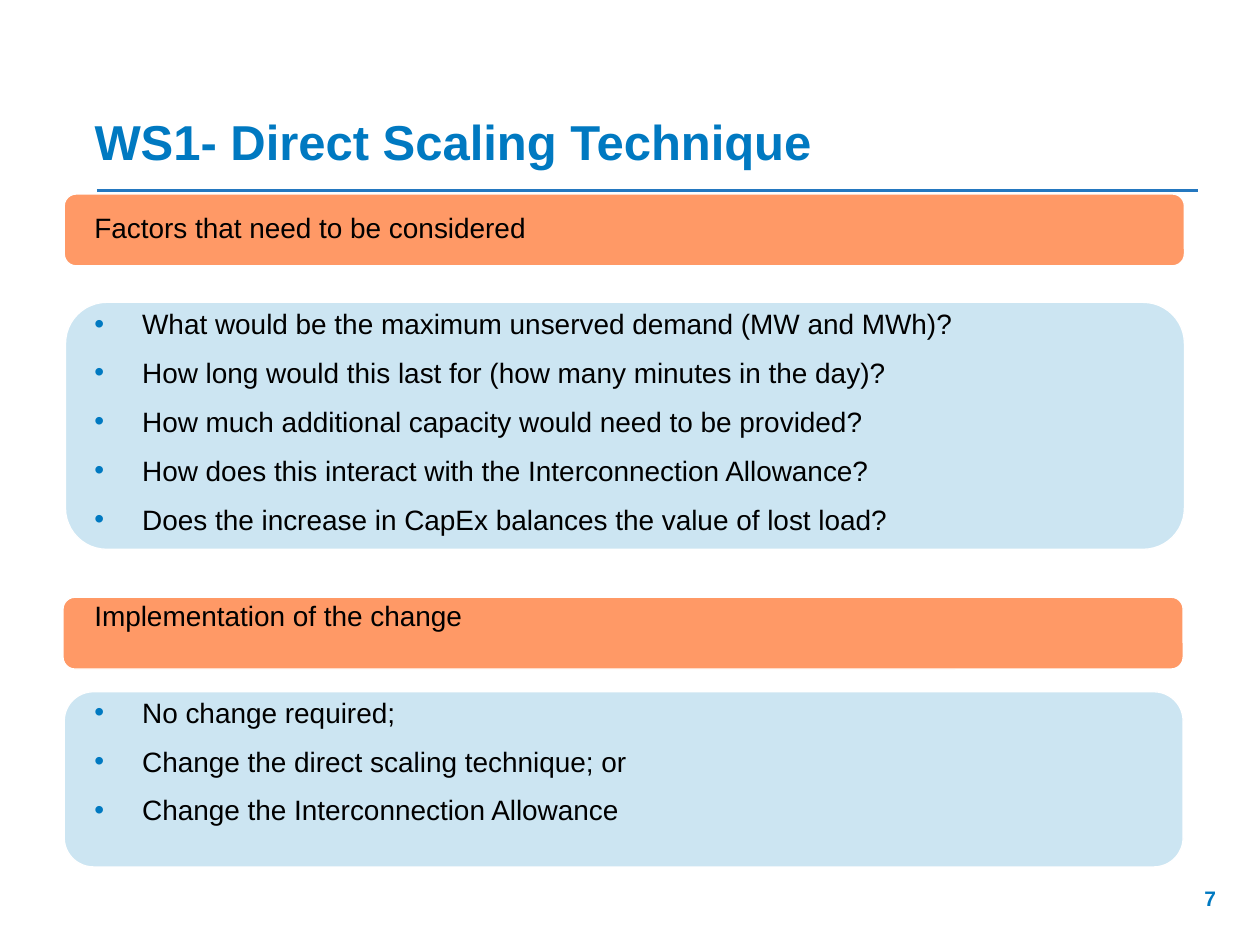
"""Builds the slide on the factors and choices for the direct scaling technique."""
from lxml import etree
from pptx import Presentation
from pptx.dml.color import RGBColor
from pptx.enum.shapes import MSO_CONNECTOR, MSO_SHAPE
from pptx.enum.text import MSO_ANCHOR, MSO_AUTO_SIZE, PP_ALIGN
from pptx.oxml.ns import qn
from pptx.util import Inches, Pt

BLUE, PALE, ORANGE, WHITE, BLACK = "0079C1", "CCE5F2", "FF9966", "FFFFFF", "000000"
RULE = "2478C0"
TITLE = "WS1- Direct Scaling Technique"
PARTS = [
    ("Factors that need to be considered", [
        "What would be the maximum unserved demand (MW and MWh)?",
        "How long would this last for (how many minutes in the day)?",
        "How much additional capacity would need to be provided?",
        "How does this interact with the Interconnection Allowance?",
        "Does the increase in CapEx balances the value of lost load?",
    ]),
    ("Implementation of the change", [
        "No change required;",
        "Change the direct scaling technique; or",
        "Change the Interconnection Allowance",
    ]),
]
PANELS = [
    (0.51, 5.49, 8.88, 1.39, PALE),
    (0.5, 4.74, 8.89, 0.57, ORANGE),
    (0.52, 2.4, 8.88, 1.96, PALE),
    (0.51, 1.54, 8.89, 0.57, ORANGE),
]
GAP, WIDE = 8.75, 35.9


def rgb(code):
    """Turn a hex string into a colour."""
    return RGBColor.from_string(code)


def place(shape, *box):
    """Set left, top, width and height in inches."""
    shape.left, shape.top, shape.width, shape.height = map(Inches, box)


def write(para, text, size, color, bold=False):
    """Add one styled run to a paragraph."""
    run = para.add_run()
    run.text = text
    font = run.font
    font.name, font.size, font.bold = "Arial", Pt(size), bold
    font.color.rgb = rgb(color)


def bullet(para):
    """Give a paragraph a blue bullet and a hanging indent."""
    props = para._p.get_or_add_pPr()
    props.set("marL", str(Inches(0.38)))
    props.set("indent", str(-Inches(0.38)))
    tint = etree.SubElement(props, qn("a:buClr"))
    etree.SubElement(tint, qn("a:srgbClr")).set("val", BLUE)
    etree.SubElement(props, qn("a:buFont")).set("typeface", "Arial")
    etree.SubElement(props, qn("a:buChar")).set("char", "•")


def add_rule(slide):
    """Draw the line below the title."""
    line = slide.shapes.add_connector(
        MSO_CONNECTOR.STRAIGHT, Inches(0.77), Inches(1.51), Inches(9.51), Inches(1.51))
    line.line.color.rgb = rgb(RULE)
    line.line.width = Pt(1.5)
    etree.SubElement(line._element.spPr, qn("a:effectLst"))


def add_panel(slide, left, top, width, height, color):
    """Draw one rounded panel."""
    panel = slide.shapes.add_shape(
        MSO_SHAPE.ROUNDED_RECTANGLE, *map(Inches, (left, top, width, height)))
    panel.shadow.inherit = False
    panel.fill.solid()
    panel.fill.fore_color.rgb = rgb(color)
    panel.line.color.rgb = rgb(WHITE)
    panel.line.width = Pt(0.75)


def add_text(slide, *box):
    """Add a wrapping text box and return its frame."""
    frame = slide.shapes.add_textbox(*map(Inches, box)).text_frame
    frame.word_wrap = True
    return frame


def add_title(slide):
    """Place and fill the title."""
    title = slide.shapes.title
    place(title, 0.65, 0.83, 8.85, 0.57)
    frame = title.text_frame
    frame.word_wrap = True
    frame.vertical_anchor = MSO_ANCHOR.BOTTOM
    frame.auto_size = MSO_AUTO_SIZE.SHAPE_TO_FIT_TEXT
    para = frame.paragraphs[0]
    para.alignment = PP_ALIGN.LEFT
    write(para, TITLE, 28, BLUE, True)


def add_body(slide):
    """Write each heading and its bullets in one text box."""
    frame = add_text(slide, 0.65, 1.62, 8.85, 5.08)
    para = frame.paragraphs[0]
    for head, items in PARTS:
        for text in [head, *items]:
            if para.runs:
                para = frame.add_paragraph()
            if text != head:
                bullet(para)
            para.space_after = Pt(WIDE if text in (head, items[-1]) else GAP)
            write(para, text, 16, BLACK)


def main():
    """Build and save the slide."""
    deck = Presentation()
    deck.slide_width, deck.slide_height = Inches(10), Inches(7.5)
    slide = deck.slides.add_slide(deck.slide_layouts[5])
    add_rule(slide)
    for panel in PANELS:
        add_panel(slide, *panel)
    number = add_text(slide, 7.42, 6.98, 2.33, 0.4).paragraphs[0]
    number.alignment = PP_ALIGN.RIGHT
    write(number, "7", 12, BLUE, True)
    add_title(slide)
    add_body(slide)
    deck.save("out.pptx")


if __name__ == "__main__":
    main()
